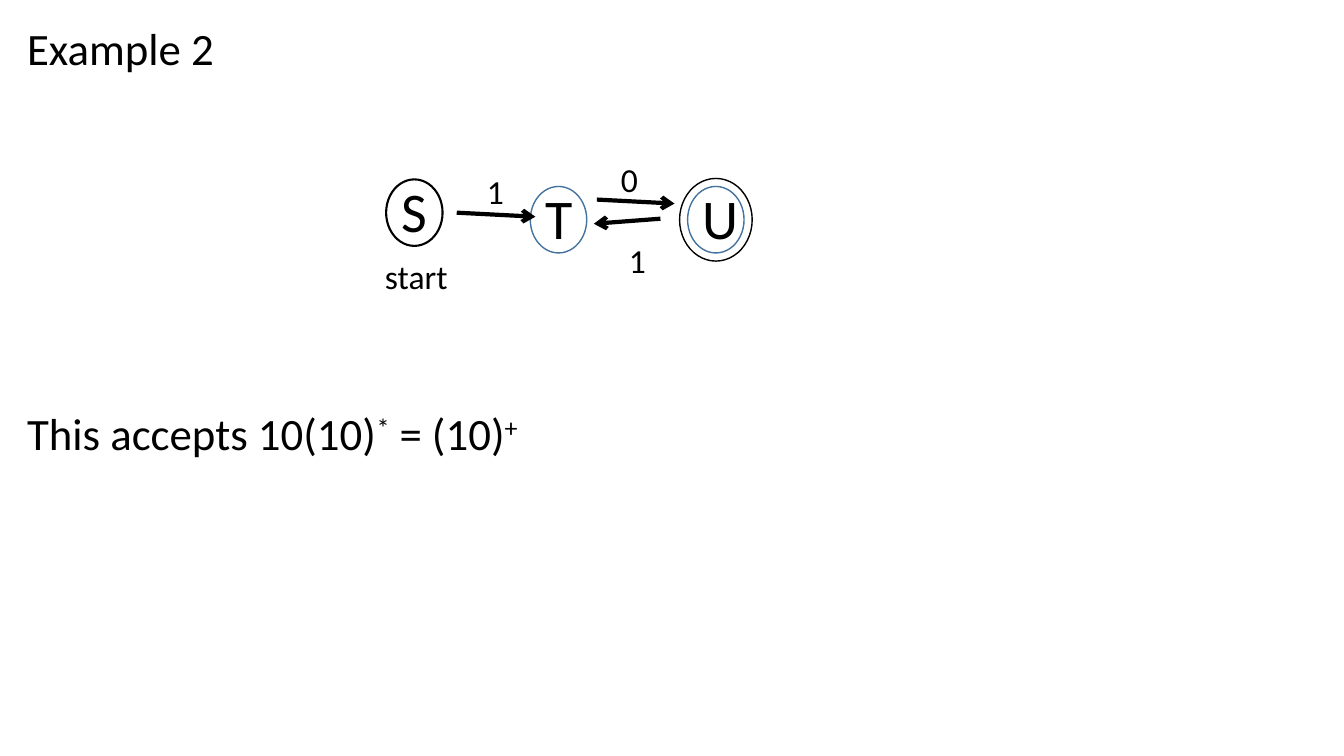
from lxml import etree
from pptx import Presentation
from pptx.dml.color import RGBColor
from pptx.enum.shapes import MSO_CONNECTOR, MSO_SHAPE
from pptx.oxml.ns import qn
from pptx.util import Inches, Pt

ELLIPSE = MSO_SHAPE.OVAL
STRAIGHT = MSO_CONNECTOR.STRAIGHT

FONT = "Calibri"
BLACK = "000000"
BLUE = "43739E"
STATE_SIZE = (0.56, 0.66)
LETTER_SIZE = (0.28, 0.77)
LETTER_OFFSET = (0.05, -0.08)
RING_MARGIN = 0.08

# Text: left, top, width, height, points, runs of (text, superscript)
TEXTS = [
    (0.17, 0.16, 3.27, 0.64, 32, [("Example 2", False)]),
    (3.72, 2.49, 1.06, 0.5, 24, [("start", False)]),
    (6.06, 1.53, 0.3, 0.5, 24, [("0", False)]),
    (6.14, 2.33, 0.23, 0.5, 24, [("1", False)]),
    (4.73, 1.65, 0.31, 0.5, 24, [("1", False)]),
    (0.17, 3.98, 10.41, 0.64, 32, [
        ("This accepts 10(10)", False), ("*", True),
        (" = (10)", False), ("+", True)]),
]
# States: letter, left, top, line colour, line width, accepting
STATES = [
    ("S", 3.83, 1.78, BLACK, 1.5, False),
    ("T", 5.26, 1.85, BLUE, 1, False),
    ("U", 6.82, 1.85, BLUE, 1, True),
]
# Transitions: from x, from y, to x, to y
TRANSITIONS = [
    (4.53, 2.11, 5.31, 2.15),
    (5.92, 1.98, 6.69, 2.02),
    (6.55, 2.17, 5.89, 2.22),
]


def color(hex_string):
    return RGBColor.from_string(hex_string)


def add_text(slide, left, top, width, height, size, runs):
    box = slide.shapes.add_textbox(*map(Inches, (left, top, width, height)))
    box.text_frame.word_wrap = True
    paragraph = box.text_frame.paragraphs[0]
    for text, superscript in runs:
        run = paragraph.add_run()
        run.text = text
        run.font.name = FONT
        run.font.size = Pt(size)
        run.font.color.rgb = color(BLACK)
        if superscript:
            run.font._element.set("baseline", "30000")


def add_ellipse(slide, left, top, width, height, line_color, line_width):
    shape = slide.shapes.add_shape(
        ELLIPSE, *map(Inches, (left, top, width, height)))
    shape.shadow.inherit = False
    shape.fill.background()
    shape.line.color.rgb = color(line_color)
    shape.line.width = Pt(line_width)


def add_state(slide, letter, left, top, line_color, line_width, accepting):
    width, height = STATE_SIZE
    add_ellipse(slide, left, top, width, height, line_color, line_width)
    add_text(slide, left + LETTER_OFFSET[0], top + LETTER_OFFSET[1],
             *LETTER_SIZE, 40, [(letter, False)])
    if accepting:
        add_ellipse(slide, left - RING_MARGIN, top - RING_MARGIN,
                    width + 2 * RING_MARGIN, height + 2 * RING_MARGIN,
                    BLACK, 1)


def add_transition(slide, *ends):
    arrow = slide.shapes.add_connector(STRAIGHT, *map(Inches, ends))
    arrow.line.color.rgb = color(BLACK)
    arrow.line.width = Pt(3)
    properties = arrow._element.spPr
    tail = etree.SubElement(properties.find(qn("a:ln")), qn("a:tailEnd"))
    tail.set("type", "arrow")
    etree.SubElement(properties, qn("a:effectLst"))


def main():
    presentation = Presentation()
    presentation.slide_width = Inches(13.33)
    presentation.slide_height = Inches(7.5)
    slide = presentation.slides.add_slide(presentation.slide_layouts[6])

    # Automaton
    for state in STATES:
        add_state(slide, *state)
    for transition in TRANSITIONS:
        add_transition(slide, *transition)

    # Title, labels and conclusion
    for text in TEXTS:
        add_text(slide, *text)

    presentation.save("out.pptx")


if __name__ == "__main__":
    main()
